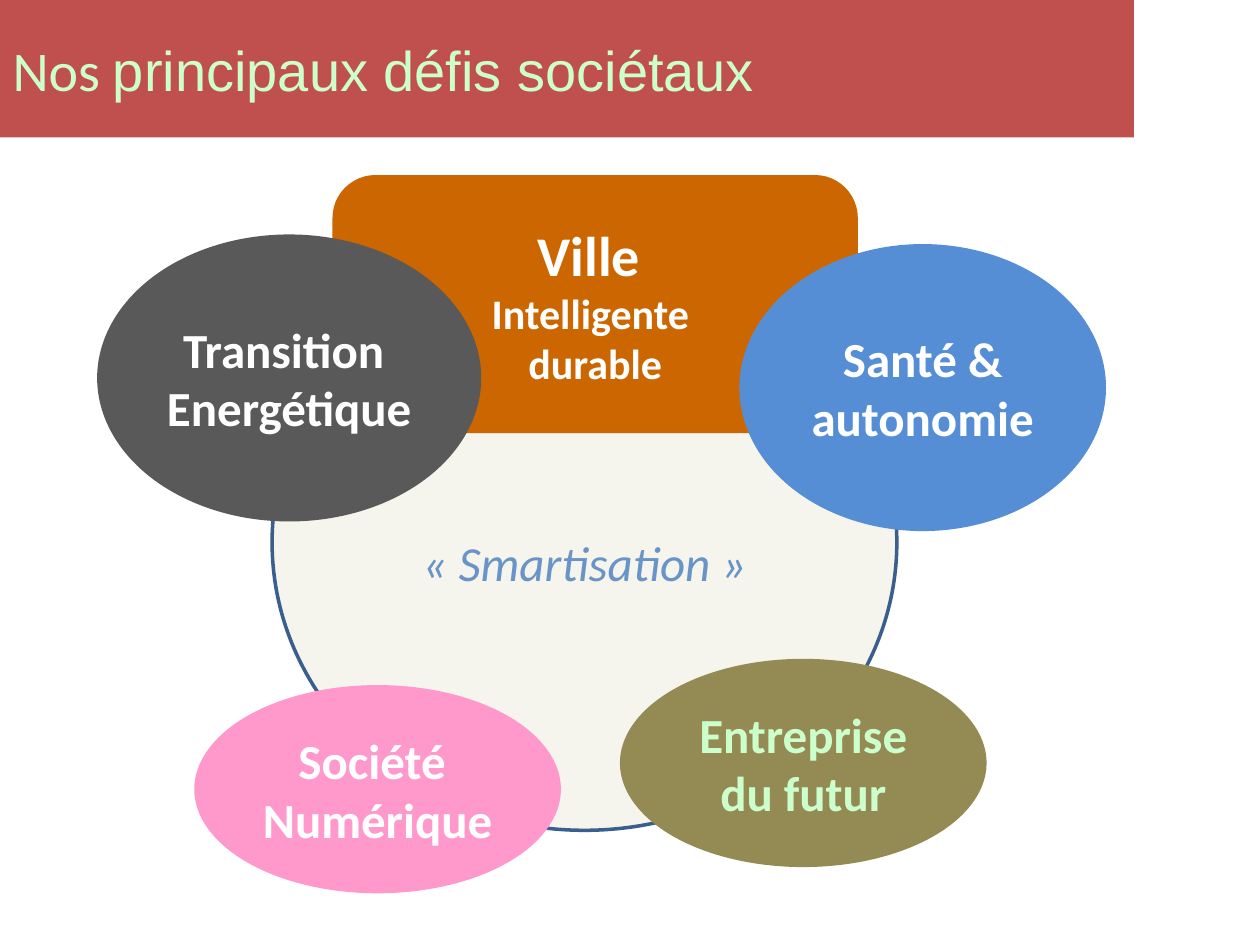
from pptx import Presentation
from pptx.dml.color import RGBColor
from pptx.enum.shapes import MSO_SHAPE
from pptx.enum.text import MSO_ANCHOR, MSO_AUTO_SIZE, PP_ALIGN
from pptx.util import Pt

HUES = {
    "red": "C0504D", "mint": "CCFFCC", "cream": "F5F4ED", "navy": "3A5F8C",
    "sky": "6994C7", "rust": "CC6600", "blue": "558ED5", "gray": "595959",
    "pink": "FF99CC", "olive": "948A54", "white": "FFFFFF",
}
OVAL, ROUND = MSO_SHAPE.OVAL, MSO_SHAPE.ROUNDED_RECTANGLE
BOLD = {"bold": True}
HEAD = [("Nos ", "Calibri"), ("principaux défis sociétaux", "Arial")]
HUB = {"kind": OVAL, "box": (155.5, 145.5, 357, 329), "fill": "cream",
       "ink": "sky", "look": {"italic": True}, "edge": "navy", "drop": 22,
       "text": [("« Smartisation »", 28)]}
THEMES = [
    (ROUND, (190, 100, 300.25, 147.5), "rust", "white",
     [("Ville ", 32), ("Intelligente ", 24), ("durable", 24)]),
    (OVAL, (422.5, 139.5, 209.5, 164), "blue", "white",
     [("Santé & autonomie", 28)]),
    (OVAL, (55.5, 134, 219.5, 164), "gray", "white",
     [("Transition ", 28), ("Energétique", 28)]),
    (OVAL, (111, 391.5, 209.5, 119), "pink", "white",
     [("Société ", 28), ("Numérique", 28)]),
    (OVAL, (354.25, 376.5, 209.5, 119), "olive", "mint",
     [("Entreprise", 28), ("du futur", 28)]),
]


def hue(name):
    return RGBColor.from_string(HUES[name])


def apply(item, look):
    for key, val in look.items():
        setattr(item, key, val)


def paint(shape, name):
    shape.fill.solid()
    shape.fill.fore_color.rgb = hue(name)


def write(para, text, size, face, ink, look):
    run = para.add_run()
    run.text = text
    apply(run.font, {"size": Pt(size), "name": face, **look})
    run.font.color.rgb = hue(ink)


def draw(slide, kind, box, fill, ink, text, look=BOLD, edge=None, drop=0):
    shape = slide.shapes.add_shape(kind, *map(Pt, box))
    shape.shadow.inherit = False
    paint(shape, fill)
    if edge:
        shape.line.color.rgb = hue(edge)
        shape.line.width = Pt(2)
    else:
        shape.line.fill.background()
    frame = shape.text_frame
    apply(frame, {"word_wrap": True, "vertical_anchor": MSO_ANCHOR.MIDDLE,
                  "margin_top": Pt(3.6 + drop)})
    for i, (line, size) in enumerate(text):
        para = frame.add_paragraph() if i else frame.paragraphs[0]
        para.alignment = PP_ALIGN.CENTER
        write(para, line, size, "Calibri", ink, look)


def main():
    deck = Presentation()
    apply(deck, {"slide_width": Pt(720), "slide_height": Pt(540)})
    slide = deck.slides.add_slide(deck.slide_layouts[5])
    title = slide.shapes.title
    apply(title, {"left": Pt(0), "top": Pt(0),
                  "width": Pt(648), "height": Pt(78.5)})
    paint(title, "red")
    apply(title.text_frame, {"vertical_anchor": MSO_ANCHOR.MIDDLE,
                             "auto_size": MSO_AUTO_SIZE.NONE,
                             "word_wrap": True})
    para = title.text_frame.paragraphs[0]
    para.alignment = PP_ALIGN.LEFT
    for text, face in HEAD:
        write(para, text, 32, face, "mint", {})
    draw(slide, **HUB)
    for theme in THEMES:
        draw(slide, *theme)
    deck.save("out.pptx")


if __name__ == "__main__":
    main()
